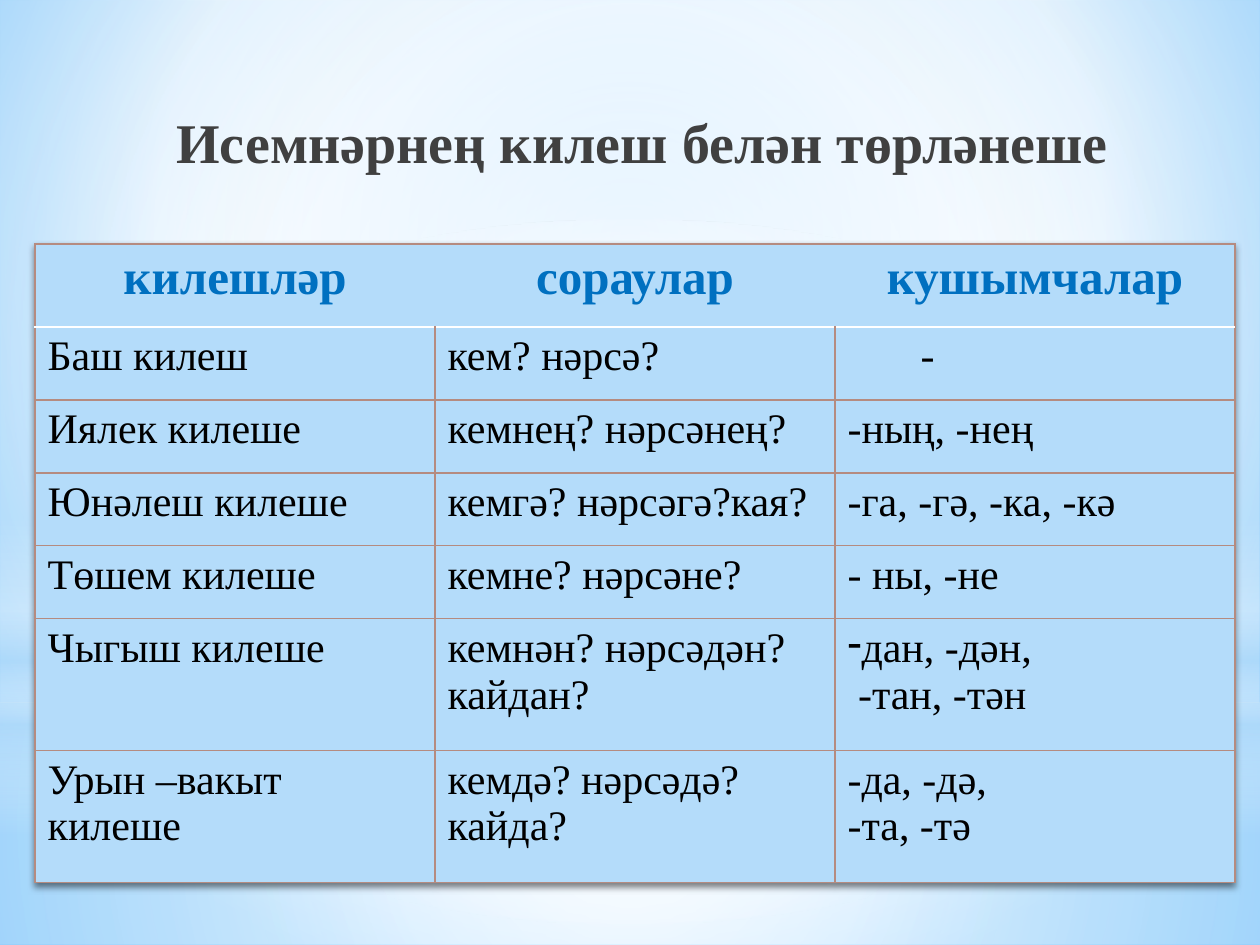
"""Build a slide with a table of Tatar noun cases."""
from lxml import etree
from pptx import Presentation
from pptx.dml.color import RGBColor
from pptx.enum.shapes import MSO_SHAPE
from pptx.enum.text import PP_ALIGN
from pptx.oxml.ns import qn
from pptx.util import Emu, Pt

RECTANGLE, OVAL = MSO_SHAPE.RECTANGLE, MSO_SHAPE.OVAL
CENTER, LEFT = PP_ALIGN.CENTER, PP_ALIGN.LEFT

WHITE = RGBColor(0xFF, 0xFF, 0xFF)
BLACK = RGBColor(0, 0, 0)
GRAY = RGBColor(0x40, 0x40, 0x40)
BLUE = RGBColor(0, 0x70, 0xC0)
PALE = RGBColor(0xB4, 0xDC, 0xFA)
SKY = RGBColor(0x9E, 0xD5, 0xFF)
DEEP_SKY = RGBColor(0x5B, 0xB9, 0xFF)
BROWN = RGBColor(0xB5, 0x8B, 0x80)

FONT = "Times New Roman"
EMU_PER_PX = 914400 / 126
TITLE = "Исемнәрнең килеш белән төрләнеше"
TITLE_BOX = (74, 101, 1131, 103)
HEADER = ("килешләр", "сораулар", "кушымчалар")
CASES = [
    ("Баш килеш", "кем? нәрсә?", "-"),
    ("Иялек килеше", "кемнең? нәрсәнең?", "-ның, -нең"),
    ("Юнәлеш килеше", "кемгә? нәрсәгә?кая?", "-га, -гә, -ка, -кә"),
    ("Төшем килеше", "кемне? нәрсәне?", "- ны, -не"),
    ("Чыгыш килеше", "кемнән? нәрсәдән?\nкайдан?", "дан, -дән,\n -тан, -тән"),
    ("Урын –вакыт килеше", "кемдә? нәрсәдә?\nкайда?", "-да, -дә,\n-та, -тә"),
]
TABLE_LEFT, TABLE_TOP, COLUMN_WIDTH = 35, 244, 400
ROW_HEIGHTS = (83, 73, 73, 73, 73, 132, 132)
DASH_CELL, DASH_INDENT = (1, 2), 73
BULLET_CELL = (5, 2)

BACKGROUND_STOPS = [(0, SKY, 100), (60, WHITE, 100), (100, DEEP_SKY, 100)]
BACKGROUND_FOCUS = (20, 10, 20, 60)
MIDDLE = (50, 50, 50, 50)
GLOWS = [
    (RECTANGLE, (0, 703, 1260, 242), MIDDLE,
     [(0, WHITE, 91), (37, WHITE, 76), (100, PALE, 79)]),
    (RECTANGLE, (0, 0, 1260, 703), MIDDLE,
     [(0, WHITE, 89), (48, WHITE, 62), (100, PALE, 79)]),
    (RECTANGLE, (0, 519, 1260, 315), None,
     [(0, WHITE, 0), (29, WHITE, 30), (45, PALE, 40), (55, WHITE, 26),
      (65, PALE, 60), (100, WHITE, 0)]),
    (OVAL, (0, 220, 1260, 703), MIDDLE, [(0, WHITE, 100), (56, WHITE, 0)]),
]


def px(length):
    return Emu(round(length * EMU_PER_PX))


def add(parent, tag, **attributes):
    values = {key: str(value) for key, value in attributes.items()}
    return etree.SubElement(parent, qn(tag), values)


def add_color(parent, color, opacity=100):
    node = add(parent, "a:srgbClr", val=color)
    if opacity < 100:
        add(node, "a:alpha", val=opacity * 1000)


def apply_gradient(properties, stops, focus):
    gradient = etree.Element(qn("a:gradFill"), rotWithShape="1")
    stop_list = add(gradient, "a:gsLst")
    for position, color, opacity in stops:
        add_color(add(stop_list, "a:gs", pos=position * 1000), color, opacity)
    if focus:
        circle = add(gradient, "a:path", path="circle")
        sides = {side: share * 1000 for side, share in zip("ltrb", focus)}
        add(circle, "a:fillToRect", **sides)
    else:
        add(gradient, "a:lin", ang=5400000, scaled=0)
    properties.replace(properties.find(qn("a:solidFill")), gradient)


def format_text(text_frame, size, color, bold, alignment):
    for paragraph in text_frame.paragraphs:
        paragraph.alignment = alignment
        for run in paragraph.runs:
            run.font.name = FONT
            run.font.size = Pt(size)
            run.font.bold = bold
            run.font.color.rgb = color


def set_borders(cell, borders):
    properties = cell._tc.get_or_add_tcPr()
    for index, side in enumerate("LRTB"):
        color, width = borders[side]
        line = add(properties, "a:ln" + side, w=Pt(width))
        if color is None:
            add(line, "a:noFill")
        else:
            add_color(add(line, "a:solidFill"), color)
        properties.insert(index, line)


def cell_borders(row, column):
    thin, heavy, absent = (BROWN, 0.75), (WHITE, 1.5), (None, 0.75)
    borders = dict.fromkeys("LRTB", thin)
    if row == 0:
        borders["B"] = heavy
        if column > 0:
            borders["L"] = absent
        if column < len(HEADER) - 1:
            borders["R"] = absent
    elif row == 1:
        borders["T"] = heavy
    return borders


def add_background(slide):
    slide.background.fill.solid()
    slide.background.fill.fore_color.rgb = WHITE
    properties = slide.element.find(".//" + qn("p:bgPr"))
    apply_gradient(properties, BACKGROUND_STOPS, BACKGROUND_FOCUS)
    for kind, box, focus, stops in GLOWS:
        shape = slide.shapes.add_shape(kind, *map(px, box))
        shape.shadow.inherit = False
        shape.line.fill.background()
        shape.fill.solid()
        apply_gradient(shape.element.spPr, stops, focus)


def add_title(slide):
    text_frame = slide.shapes.add_textbox(*map(px, TITLE_BOX)).text_frame
    text_frame.word_wrap = True
    text_frame.text = TITLE
    format_text(text_frame, 32, GRAY, True, CENTER)
    paragraph = text_frame.paragraphs[0]
    paragraph.space_before, paragraph.space_after = Pt(5), Pt(3)
    paragraph._p.get_or_add_pPr().set("marL", str(px(6)))


def add_case_table(slide):
    rows = [HEADER, *CASES]
    frame = slide.shapes.add_table(
        len(rows), len(HEADER), px(TABLE_LEFT), px(TABLE_TOP),
        px(COLUMN_WIDTH * len(HEADER)), px(sum(ROW_HEIGHTS)))
    table = frame.table
    table.horz_banding = False
    for column in table.columns:
        column.width = px(COLUMN_WIDTH)
    for row, (texts, height) in enumerate(zip(rows, ROW_HEIGHTS)):
        table.rows[row].height = px(height)
        for column, text in enumerate(texts):
            cell = table.cell(row, column)
            cell.text_frame.text = text
            cell.fill.solid()
            cell.fill.fore_color.rgb = PALE
            set_borders(cell, cell_borders(row, column))
            style = (24, BLACK, False, LEFT) if row else (28, BLUE, True, CENTER)
            format_text(cell.text_frame, *style)

    dash = table.cell(*DASH_CELL).text_frame.paragraphs[0]
    dash._p.get_or_add_pPr().set("marL", str(px(DASH_INDENT)))
    bulleted = table.cell(*BULLET_CELL).text_frame.paragraphs[0]
    add(bulleted._p.get_or_add_pPr(), "a:buChar", char="-")

    properties = table._tbl.tblPr
    effects = add(properties, "a:effectLst")
    shadow = add(effects, "a:outerShdw", blurRad=Pt(4), dist=Pt(2),
                 dir=5400000, rotWithShape=0)
    add_color(shadow, BLACK, 50)
    properties.insert(0, effects)


def main():
    presentation = Presentation()
    presentation.slide_width, presentation.slide_height = px(1260), px(945)
    slide = presentation.slides.add_slide(presentation.slide_layouts[6])
    add_background(slide)
    add_title(slide)
    add_case_table(slide)
    presentation.save("out.pptx")


if __name__ == "__main__":
    main()
